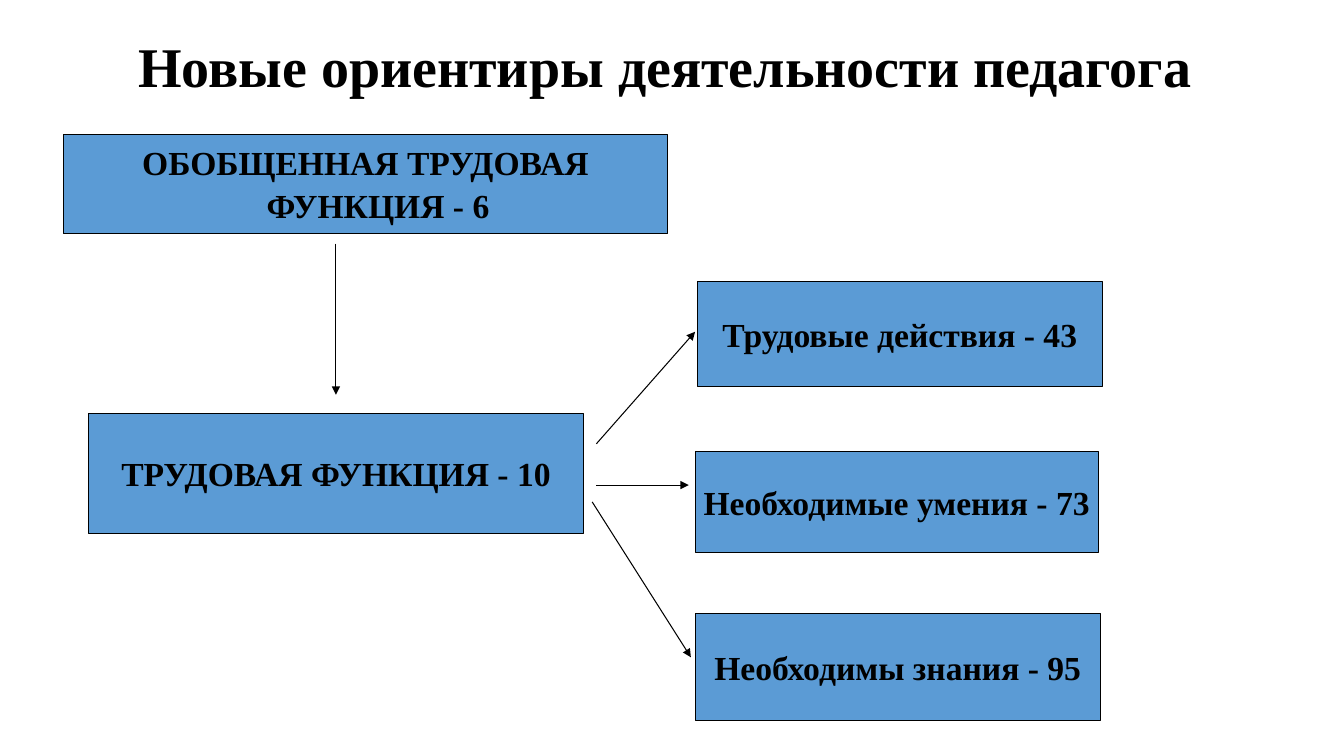
from lxml import etree
from pptx import Presentation
from pptx.dml.color import RGBColor
from pptx.enum.shapes import MSO_CONNECTOR, MSO_SHAPE
from pptx.enum.text import MSO_ANCHOR, MSO_AUTO_SIZE, PP_ALIGN
from pptx.oxml.ns import qn
from pptx.util import Pt

BLACK = RGBColor(0x00, 0x00, 0x00)
BLUE = RGBColor(0x5B, 0x9B, 0xD5)
FONT = "Times New Roman"
RECT = MSO_SHAPE.RECTANGLE
LINE = MSO_CONNECTOR.STRAIGHT
MIDDLE, TOP = MSO_ANCHOR.MIDDLE, MSO_ANCHOR.TOP
CENTER = PP_ALIGN.CENTER
NO_FIT = MSO_AUTO_SIZE.NONE


def place(shape, left, top, width, height):
    shape.left, shape.top = Pt(left), Pt(top)
    shape.width, shape.height = Pt(width), Pt(height)


def write(shape, text, size, anchor, wrap):
    frame = shape.text_frame
    frame.auto_size = NO_FIT
    frame.word_wrap = wrap
    frame.vertical_anchor = anchor
    para = frame.paragraphs[0]
    para.alignment = CENTER
    para.space_before = Pt(0)
    run = para.add_run()
    run.text = text
    run.font.name = FONT
    run.font.size = Pt(size)
    run.font.bold = True
    run.font.color.rgb = BLACK
    return para


deck = Presentation()
deck.slide_width, deck.slide_height = Pt(960), Pt(540)
slide = deck.slides.add_slide(deck.slide_layouts[1])

# Title
title = slide.shapes.title
place(title, 66, 28.8, 828, 41)
para = write(title, "Новые ориентиры деятельности педагога ", 40, MIDDLE, True)
para.line_spacing = 0.9

# General function, with a hanging indent and no bullet
main = slide.placeholders[1]
place(main, 45, 96, 432, 71)
para = write(main, "ОБОБЩЕННАЯ ТРУДОВАЯ ФУНКЦИЯ - 6", 24, TOP, True)
para.line_spacing = 1.06
props = para._p.get_or_add_pPr()
props.set("marL", str(Pt(18)))
props.set("indent", str(Pt(-18)))
etree.SubElement(props, qn("a:buNone"))

# Function and its three parts
boxes = [main]
for text, left, top, width, height in [
    ("ТРУДОВАЯ ФУНКЦИЯ - 10", 63, 295.5, 354, 85.5),
    ("Трудовые действия - 43", 498, 201, 289.5, 75),
    ("Необходимые умения - 73", 496.5, 322.5, 288, 72),
    ("Необходимы знания - 95", 496.5, 438, 289.5, 76.5),
]:
    box = slide.shapes.add_shape(RECT, Pt(left), Pt(top), Pt(width), Pt(height))
    box.shadow.inherit = False
    write(box, text, 24, MIDDLE, False)
    boxes.append(box)

for box in boxes:
    box.fill.solid()
    box.fill.fore_color.rgb = BLUE
    box.line.color.rgb = BLACK
    box.line.width = Pt(0.75)

# Arrows, which stop short of the boxes
for x1, y1, x2, y2 in [
    (426, 317, 496.5, 237),
    (426, 346.5, 492, 346.5),
    (423, 358.5, 493.5, 469.5),
    (240, 174, 240, 282),
]:
    arrow = slide.shapes.add_connector(LINE, Pt(x1), Pt(y1), Pt(x2), Pt(y2))
    arrow.line.color.rgb = BLACK
    arrow.line.width = Pt(0.75)
    edge = arrow.line._get_or_add_ln()
    etree.SubElement(edge, qn("a:tailEnd"), type="triangle")
    etree.SubElement(arrow._element.spPr, qn("a:effectLst"))

deck.save("out.pptx")
